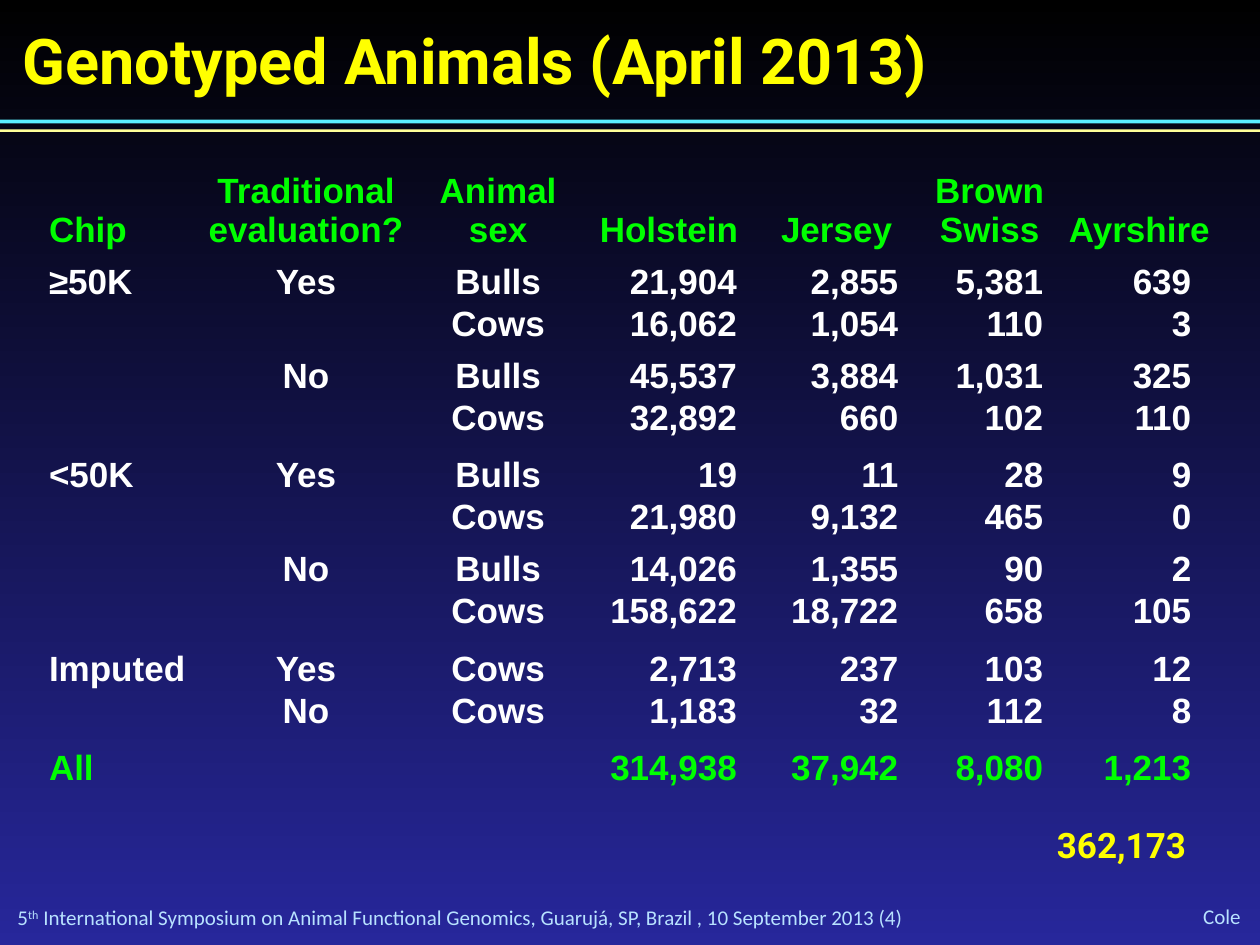
from dataclasses import dataclass

from pptx import Presentation
from pptx.dml.color import RGBColor
from pptx.enum.shapes import MSO_SHAPE
from pptx.enum.text import MSO_ANCHOR, PP_ALIGN
from pptx.util import Pt

RECT = MSO_SHAPE.RECTANGLE
TOP, MIDDLE, BOTTOM = MSO_ANCHOR.TOP, MSO_ANCHOR.MIDDLE, MSO_ANCHOR.BOTTOM
LEFT, CENTER, RIGHT = PP_ALIGN.LEFT, PP_ALIGN.CENTER, PP_ALIGN.RIGHT
NO_STYLE_NO_GRID = "{2D5ABB26-0587-4C30-8999-92F81FD0307C}"


@dataclass(frozen=True)
class Theme:
    bg_top: str = "000000"
    bg_bottom: str = "27279B"
    yellow: str = "FFFF00"
    green: str = "00FF00"
    white: str = "FFFFFF"
    pale_blue: str = "B8E2FF"
    cyan_rule: str = "5BEFFF"
    yellow_rule: str = "FFFF99"
    display: str = "Roboto"
    body: str = "Arial"
    small: str = "Calibri"
    title_size: int = 36
    body_size: int = 20
    small_size: int = 12


T = Theme()
TITLE_STYLE = (T.display, T.title_size, T.yellow, True)
TOTAL_STYLE = (T.display, T.body_size, T.yellow, True)
FOOTER_STYLE = (T.small, T.small_size, T.pale_blue, False)
HEAD_STYLE = (T.body, T.body_size, T.green, True)
DATA_STYLE = (T.body, T.body_size, T.white, True)

COLUMN_WIDTHS = [88.6, 116.6, 103, 95.8, 92.2, 86.4, 81]
NUMBER_INSETS = [0, 0, 0, 10.8, 10.8, 14.4, 10.8]
HEAD_INSETS = [0, 0, 0, 3.6, 0, 3.6, 0]
ALIGNMENTS = [LEFT, CENTER, CENTER, RIGHT, RIGHT, RIGHT, RIGHT]
HEAD_HEIGHT, ROW, ROW_PAIR_END, ROW_GROUP_END = 52, 23.6, 29.6, 32.8
HEADINGS = ["Chip", "Traditional evaluation?", "Animal sex", "Holstein",
            "Jersey", "Brown Swiss", "Ayrshire"]
ROWS = [
    (ROW, ["≥50K", "Yes", "Bulls", "21,904", "2,855", "5,381", "639"]),
    (ROW_PAIR_END, ["", "", "Cows", "16,062", "1,054", "110", "3"]),
    (ROW, ["", "No", "Bulls", "45,537", "3,884", "1,031", "325"]),
    (ROW_GROUP_END, ["", "", "Cows", "32,892", "660", "102", "110"]),
    (ROW, ["<50K", "Yes", "Bulls", "19", "11", "28", "9"]),
    (ROW_PAIR_END, ["", "", "Cows", "21,980", "9,132", "465", "0"]),
    (ROW, ["", "No", "Bulls", "14,026", "1,355", "90", "2"]),
    (ROW_GROUP_END, ["", "", "Cows", "158,622", "18,722", "658", "105"]),
    (ROW, ["Imputed", "Yes", "Cows", "2,713", "237", "103", "12"]),
    (ROW_GROUP_END, ["", "No", "Cows", "1,183", "32", "112", "8"]),
    (ROW, ["All", "", "", "314,938", "37,942", "8,080", "1,213"]),
]


def add_run(p, text, style):
    r = p.add_run()
    r.text = text
    r.font.name, size, color, r.font.bold = style
    r.font.size = Pt(size)
    r.font.color.rgb = RGBColor.from_string(color)
    return r


def add_text(s, box, text, style, align=LEFT, anchor=TOP, insets=(0, 0)):
    tf = s.shapes.add_textbox(*map(Pt, box)).text_frame
    tf.word_wrap = True
    tf.vertical_anchor = anchor
    tf.margin_left = tf.margin_right = Pt(insets[0])
    tf.margin_top = tf.margin_bottom = Pt(insets[1])
    p = tf.paragraphs[0]
    p.alignment = align
    add_run(p, text, style)
    return p


def add_background(s):
    fill = s.background.fill
    fill.gradient()
    fill.gradient_angle = 270
    for stop, position, color in zip(fill.gradient_stops, (0, 1), (T.bg_top, T.bg_bottom)):
        stop.position = position
        stop.color.rgb = RGBColor.from_string(color)


def add_header(s, x, y, w):
    for dy, h, color in ((68.4, 2.2, T.cyan_rule), (73.9, 1.5, T.yellow_rule)):
        sp = s.shapes.add_shape(RECT, Pt(x), Pt(y + dy), Pt(w), Pt(h))
        sp.shadow.inherit = False
        sp.fill.solid()
        sp.fill.fore_color.rgb = RGBColor.from_string(color)
        sp.line.fill.background()
    add_text(s, (x + 13, y + 12.2, 648, 44), "Genotyped Animals (April 2013)", TITLE_STYLE)


def fill_cell(cell, text, style, align, anchor, right=0, bottom=0):
    cell.fill.background()
    cell.margin_left = cell.margin_top = 0
    cell.margin_right, cell.margin_bottom = Pt(right), Pt(bottom)
    cell.vertical_anchor = anchor
    p = cell.text_frame.paragraphs[0]
    p.alignment = align
    if text:
        add_run(p, text, style)


def add_counts(s, x, y):
    heights = [HEAD_HEIGHT] + [height for height, _ in ROWS]
    frame = s.shapes.add_table(len(heights), len(COLUMN_WIDTHS), Pt(x), Pt(y),
                               Pt(sum(COLUMN_WIDTHS)), Pt(sum(heights)))
    table = frame.table
    table.first_row = table.horz_banding = False
    frame._element.xpath(".//a:tableStyleId")[0].text = NO_STYLE_NO_GRID
    for column, width in zip(table.columns, COLUMN_WIDTHS):
        column.width = Pt(width)
    for row, height in zip(table.rows, heights):
        row.height = Pt(height)
    for j, heading in enumerate(HEADINGS):
        fill_cell(table.cell(0, j), heading, HEAD_STYLE, CENTER if j else LEFT,
                  BOTTOM, HEAD_INSETS[j], 7.2)
    for i, (_, values) in enumerate(ROWS, 1):
        style = HEAD_STYLE if values[0] == "All" else DATA_STYLE
        for j, value in enumerate(values):
            fill_cell(table.cell(i, j), value, style, ALIGNMENTS[j], TOP, NUMBER_INSETS[j])


def add_footer(s, x, y, w, h):
    p = add_text(s, (x, y, 634, h), "5", FOOTER_STYLE, anchor=MIDDLE)
    r = add_run(p, "th", FOOTER_STYLE)
    r.font._element.set("baseline", "30000")
    add_run(p, " International Symposium on Animal Functional Genomics, Guarujá, SP, Brazil ,"
               " 10 September 2013 (4)", FOOTER_STYLE)
    add_text(s, (x + w - 81, y - 0.5, 81, h), "Cole", FOOTER_STYLE, RIGHT, MIDDLE)


def main():
    prs = Presentation()
    prs.slide_width, prs.slide_height = Pt(720), Pt(540)
    s = prs.slides.add_slide(prs.slide_layouts[6])
    add_background(s)
    add_header(s, 0, 0, 720)
    add_counts(s, 28, 95)
    add_text(s, (596.9, 467.3, 102, 31.5), "362,173", TOTAL_STYLE, insets=(7.2, 3.6))
    add_footer(s, 10, 517, 699, 14.5)
    prs.save("out.pptx")


if __name__ == "__main__":
    main()
